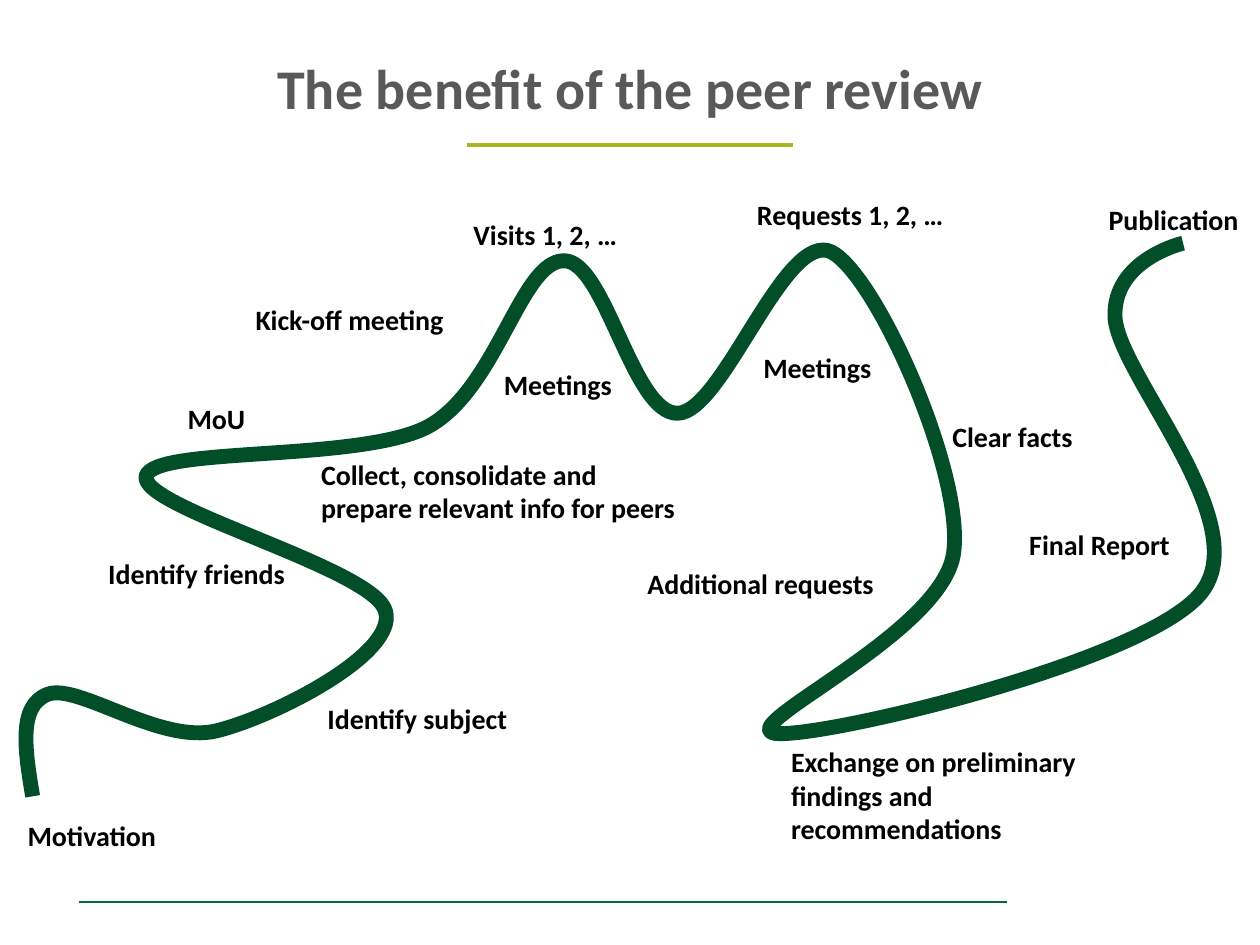
from lxml.etree import SubElement
from pptx import Presentation
from pptx.dml.color import RGBColor
from pptx.enum.shapes import MSO_CONNECTOR
from pptx.enum.text import MSO_ANCHOR, MSO_AUTO_SIZE, PP_ALIGN
from pptx.oxml.ns import qn
from pptx.util import Pt

PX = 9144  # EMU per px, 100 px to the inch
FONT = "Calibri"
COLORS = {
    "title": "595959",
    "label": "000000",
    "accent": "A8B621",
    "footer": "026938",
    "road": "014E29",
}

ROAD_BOX = (21, 193, 964, 632)  # left, top, right, bottom
ROAD_START = (26, 632)
ROAD_CURVES = [  # two control points and the end of each bend
    [(20, 596), (14, 560), (38, 551)],
    [(62, 542), (127, 591), (172, 580)],
    [(217, 569), (316, 519), (306, 485)],
    [(297, 451), (111, 403), (116, 378)],
    [(122, 354), (284, 367), (339, 339)],
    [(394, 310), (413, 208), (447, 207)],
    [(480, 205), (502, 329), (538, 328)],
    [(574, 327), (623, 182), (660, 200)],
    [(696, 219), (765, 375), (757, 438)],
    [(750, 502), (582, 576), (615, 582)],
    [(648, 587), (908, 526), (953, 471)],
    [(998, 416), (888, 298), (885, 252)],
    [(883, 206), (939, 193), (939, 193)],
]

STAGES = [  # text, left, top, width, height
    ("Identify subject", 250, 552, 189, 61),
    ("Motivation", 12, 645, 189, 61),
    ("Identify friends", 76, 437, 211, 67),
    ("MoU", 139, 314, 211, 67),
    ("Collect, consolidate and prepare relevant info for peers", 245, 358, 313, 91),
    ("Exchange on preliminary findings and recommendations", 618, 586, 260, 91),
    ("Kick-off meeting", 193, 235, 197, 37),
    ("Clear facts", 746, 328, 260, 37),
    ("Final Report", 807, 414, 211, 37),
    ("Publication", 870, 156, 211, 37),
    ("Visits 1, 2, …", 366, 168, 197, 37),
    ("Meetings", 390, 287, 197, 37),
    ("Requests 1, 2, …", 591, 152, 197, 37),
    ("Meetings", 596, 273, 197, 37),
    ("Additional requests", 504, 445, 260, 37),
]


def color(name):
    return RGBColor.from_string(COLORS[name])


def add_text(page, text, left, top, width, height, size, color_name):
    box = page.shapes.add_textbox(left * PX, top * PX, width * PX, height * PX)
    box.text_frame.word_wrap = True
    span = box.text_frame.paragraphs[0].add_run()
    span.text = text
    span.font.name = FONT
    span.font.size = Pt(size)
    span.font.bold = True
    span.font.color.rgb = color(color_name)
    return box.text_frame


def add_title(page, text):
    frame = add_text(page, text, 59, 49, 882, 47, 32, "title")
    frame.margin_left = frame.margin_right = 0
    frame.margin_top = frame.margin_bottom = 0
    frame.vertical_anchor = MSO_ANCHOR.MIDDLE
    frame.paragraphs[0].alignment = PP_ALIGN.CENTER
    frame.paragraphs[0].line_spacing = 0.9


def add_stage(page, text, left, top, width, height):
    frame = add_text(page, text, left, top, width, height, 16, "label")
    frame.auto_size = MSO_AUTO_SIZE.SHAPE_TO_FIT_TEXT


def add_rule(page, left, right, top, color_name, weight):
    rule = page.shapes.add_connector(
        MSO_CONNECTOR.STRAIGHT, left * PX, top * PX, right * PX, top * PX)
    rule.line.color.rgb = color(color_name)
    rule.line.width = Pt(weight)
    SubElement(rule._element.spPr, qn("a:effectLst"))


def add_road(page):
    """Outline the road's bounds, then put the Bézier bends inside them."""
    left, top, right, bottom = ROAD_BOX
    builder = page.shapes.build_freeform(left, top, scale=PX)
    builder.add_line_segments([(right, bottom)], close=False)
    road = builder.convert_to_shape()
    road.shadow.inherit = False
    road.fill.background()
    road.line.color.rgb = color("road")
    road.line.width = Pt(8.5)

    outline = road._element.xpath(".//a:path")[0]
    for segment in list(outline):
        outline.remove(segment)
    steps = [("a:moveTo", [ROAD_START])]
    steps += [("a:cubicBezTo", curve) for curve in ROAD_CURVES]
    for tag, points in steps:
        segment = SubElement(outline, qn(tag))
        for x, y in points:
            SubElement(segment, qn("a:pt"), x=str(x - left), y=str(y - top))


def main():
    deck = Presentation()
    deck.slide_width = 1000 * PX
    deck.slide_height = 750 * PX
    page = deck.slides.add_slide(deck.slide_layouts[6])

    add_rule(page, 63, 799, 716, "footer", 0.75)
    add_title(page, "The benefit of the peer review")
    add_rule(page, 371, 629, 115, "accent", 2.25)
    add_road(page)
    for stage in STAGES:
        add_stage(page, *stage)

    deck.save("out.pptx")


if __name__ == "__main__":
    main()
